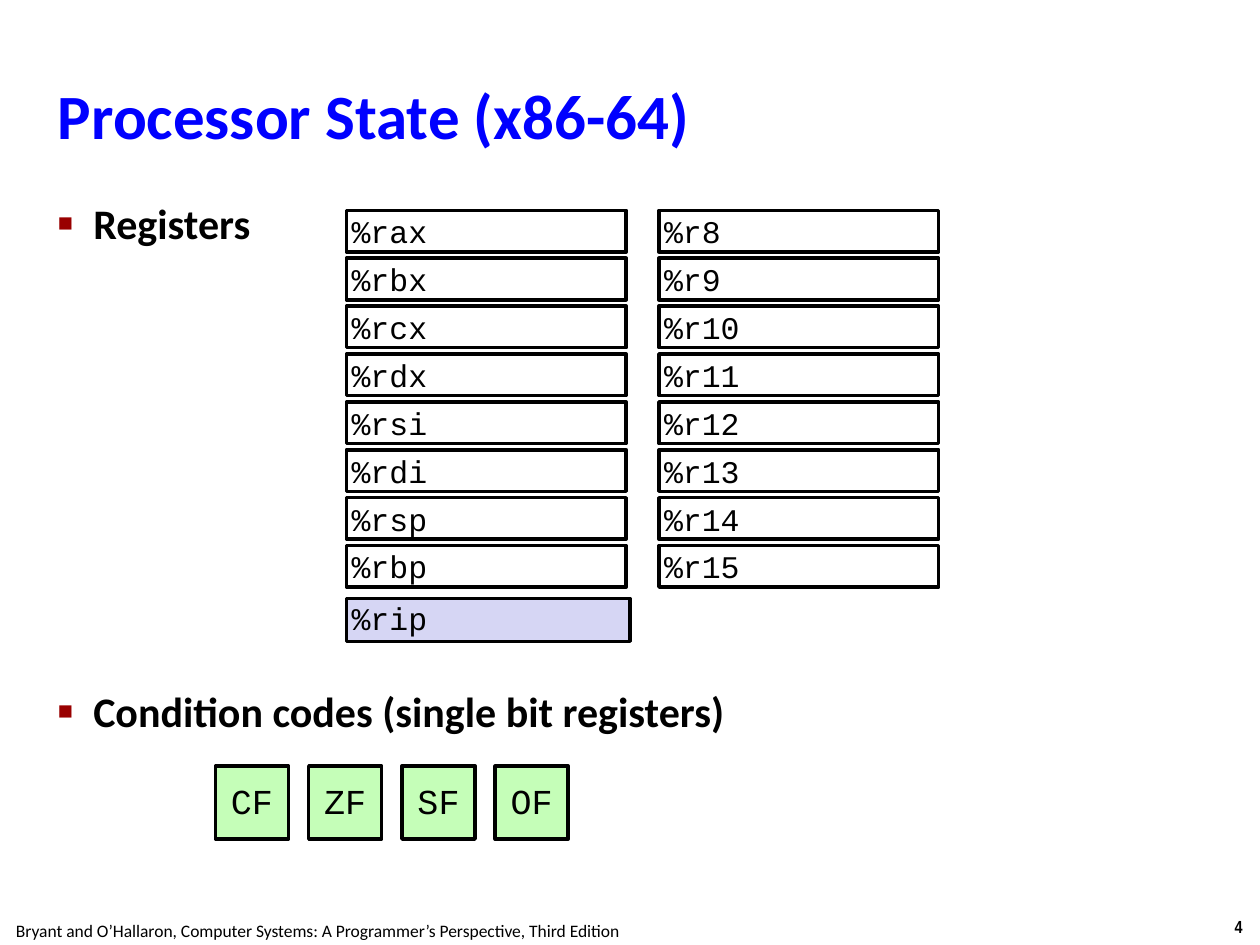
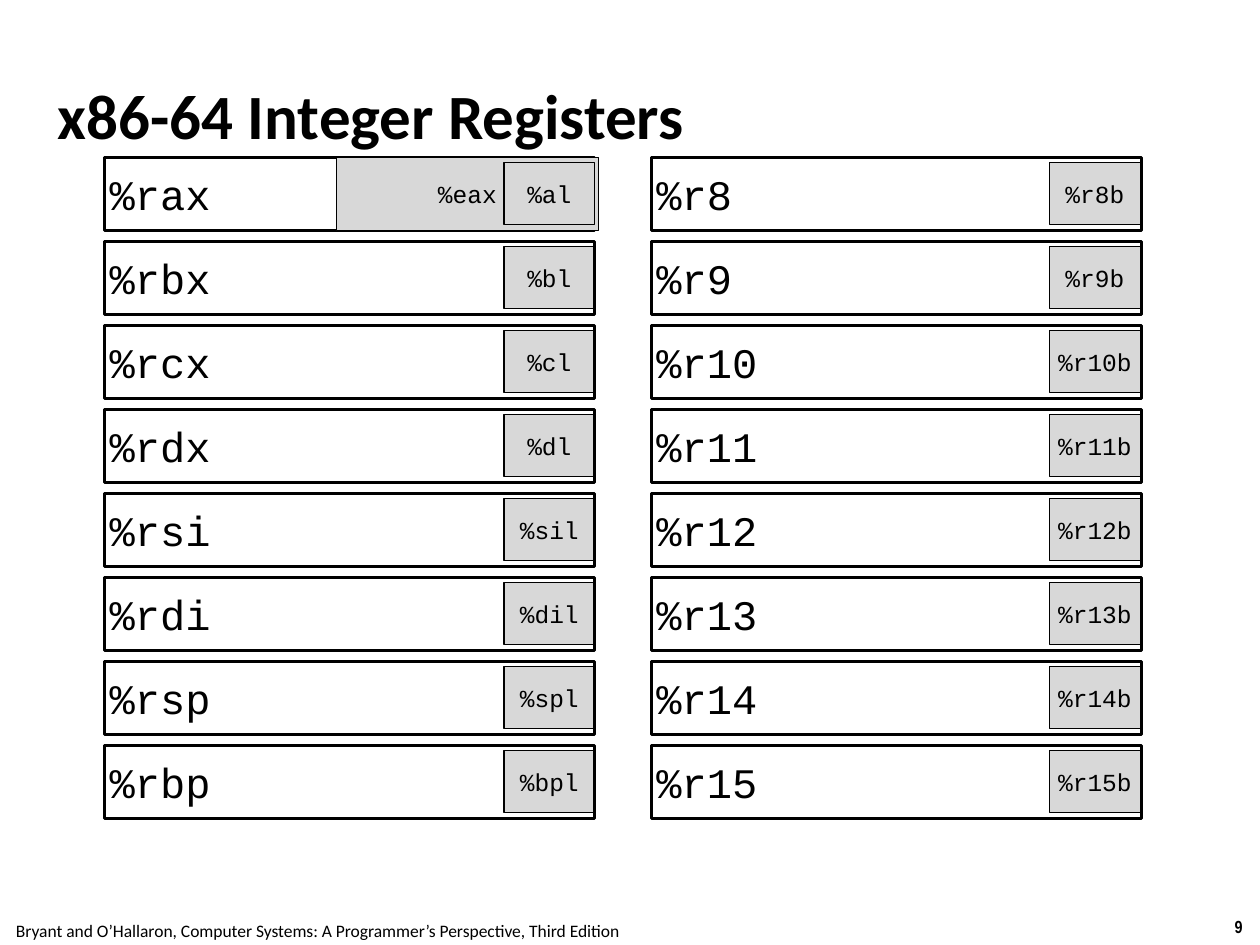
from lxml import etree
from pptx import Presentation
from pptx.dml.color import RGBColor
from pptx.enum.shapes import MSO_SHAPE
from pptx.enum.text import MSO_ANCHOR, MSO_AUTO_SIZE, PP_ALIGN
from pptx.oxml.ns import qn
from pptx.util import Inches, Pt

COLORS = {
    "ink": "000000",
    "blue": "0000FF",
    "bullet": "990000",
    "pointer": "D6D6F4",
    "flag": "C5FEB8",
    "byte": "D8D8D8",
}
SANS, NARROW, MONO = "Calibri", "Arial Narrow", "Courier New"
TITLE_ONLY, TITLE_AND_CONTENT = 5, 1
INSET = Inches(0.04)

CREDIT = ("Bryant and O’Hallaron, Computer Systems: "
          "A Programmer’s Perspective, Third Edition")

STATE_TITLE, STATE_NUMBER = "Processor State (x86-64)", "4"
STATE_TOPICS = [  # text, points of space above
    ("Registers", 6),
    ("Condition codes (single bit registers)", 250),
]
INSTRUCTION_POINTER = "%rip"
FLAGS = ["CF", "ZF", "SF", "OF"]

INTEGER_TITLE, INTEGER_NUMBER = "x86-64 Integer Registers", "9"
REGISTER_COLUMNS = [
    ["%rax", "%rbx", "%rcx", "%rdx", "%rsi", "%rdi", "%rsp", "%rbp"],
    ["%r8", "%r9", "%r10", "%r11", "%r12", "%r13", "%r14", "%r15"],
]
LOW_BYTE_COLUMNS = [
    ["%al", "%bl", "%cl", "%dl", "%sil", "%dil", "%spl", "%bpl"],
    [register + "b" for register in REGISTER_COLUMNS[1]],
]
LOW_HALF = "%eax"


def rgb(color):
    return RGBColor.from_string(COLORS[color])


def add_run(paragraph, text, size, font, color="ink", bold=False):
    run = paragraph.add_run()
    run.text = text
    run.font.size = Pt(size)
    run.font.name = font
    run.font.bold = bold
    run.font.color.rgb = rgb(color)


def set_insets(frame):
    frame.margin_left = frame.margin_right = INSET
    frame.margin_top = frame.margin_bottom = INSET


def place(shape, left, top, width, height):
    shape.left, shape.top = Inches(left), Inches(top)
    shape.width, shape.height = Inches(width), Inches(height)


def hang(paragraph, indent):
    properties = paragraph._p.get_or_add_pPr()
    properties.set("marL", str(Inches(indent)))
    properties.set("indent", str(-Inches(indent)))
    return properties


def add_margin_text(slide, text, left, top, width, font, bold=False):
    box = slide.shapes.add_textbox(
        Inches(left), Inches(top), Inches(width), Inches(0.27))
    box.text_frame.word_wrap = False
    paragraph = box.text_frame.paragraphs[0]
    paragraph.alignment = PP_ALIGN.CENTER
    add_run(paragraph, text, 10, font, bold=bold)


def add_titled_slide(deck, layout, title, number, title_color):
    """Add a slide with the title, page number and credit line all slides share."""
    slide = deck.slides.add_slide(deck.slide_layouts[layout])
    add_margin_text(slide, number, 9.66, 7.22, 0.34, NARROW, bold=True)
    add_margin_text(slide, CREDIT, -0.02, 7.25, 5.08, SANS)

    heading = slide.shapes.title
    place(heading, 0.42, 0.28, 9.17, 1.25)
    frame = heading.text_frame
    frame.auto_size = MSO_AUTO_SIZE.NONE
    frame.vertical_anchor = MSO_ANCHOR.MIDDLE
    set_insets(frame)
    paragraph = frame.paragraphs[0]
    paragraph.alignment = PP_ALIGN.LEFT
    hang(paragraph, 0.13)
    add_run(paragraph, title, 36, SANS, title_color, bold=True)
    return slide


def add_topics(slide, topics):
    body = slide.placeholders[1]
    place(body, 0.42, 1.53, 8.33, 5.47)
    frame = body.text_frame
    frame.auto_size = MSO_AUTO_SIZE.NONE
    set_insets(frame)
    for index, (topic, space) in enumerate(topics):
        paragraph = frame.add_paragraph() if index else frame.paragraphs[0]
        paragraph.space_before = Pt(space)
        properties = hang(paragraph, 0.28)
        bullet_color = etree.SubElement(properties, qn("a:buClr"))
        etree.SubElement(bullet_color, qn("a:srgbClr"), val=COLORS["bullet"])
        etree.SubElement(properties, qn("a:buSzPct"), val="60000")
        etree.SubElement(properties, qn("a:buChar"), char="■")
        add_run(paragraph, topic, 24, SANS, bold=True)


def add_cell(slide, text, left, top, width, height, size,
             fill=None, line=2, align=PP_ALIGN.LEFT, spacing=None):
    cell = slide.shapes.add_shape(
        MSO_SHAPE.RECTANGLE, Inches(left), Inches(top),
        Inches(width), Inches(height))
    cell.shadow.inherit = False
    if fill:
        cell.fill.solid()
        cell.fill.fore_color.rgb = rgb(fill)
    else:
        cell.fill.background()
    cell.line.color.rgb = rgb("ink")
    cell.line.width = Pt(line)
    frame = cell.text_frame
    frame.vertical_anchor = MSO_ANCHOR.MIDDLE
    set_insets(frame)
    paragraph = frame.paragraphs[0]
    paragraph.alignment = align
    paragraph.line_spacing = spacing
    add_run(paragraph, text, size, MONO)


def add_columns(slide, columns, lefts, top, pitch, width, height, size, **style):
    for names, left in zip(columns, lefts):
        for row, name in enumerate(names):
            add_cell(slide, name, left, top + row * pitch,
                     width, height, size, **style)


def build_state_slide(deck):
    slide = add_titled_slide(
        deck, TITLE_AND_CONTENT, STATE_TITLE, STATE_NUMBER, "blue")
    add_topics(slide, STATE_TOPICS)
    add_columns(slide, REGISTER_COLUMNS, (2.75, 5.23), 1.67, 0.38,
                2.22, 0.33, 18)
    add_cell(slide, INSTRUCTION_POINTER, 2.75, 4.75, 2.25, 0.34, 18,
             fill="pointer", spacing=0.95)
    for index, flag in enumerate(FLAGS):
        add_cell(slide, flag, 1.71 + index * 0.74, 6.08, 0.58, 0.58, 20,
                 fill="flag", align=PP_ALIGN.CENTER, spacing=0.95)


def build_integer_slide(deck):
    slide = add_titled_slide(
        deck, TITLE_ONLY, INTEGER_TITLE, INTEGER_NUMBER, "ink")
    top, pitch = 1.25, 2 / 3
    byte_top, byte_lefts, byte_size = top + 0.04, (4, 8.33), (0.72, 0.49)
    part = {"size": 14, "fill": "byte", "line": 0.75,
            "align": PP_ALIGN.CENTER}

    # The first low byte lies over the low half, so it is drawn last.
    (first_byte, *left_bytes), right_bytes = LOW_BYTE_COLUMNS
    add_columns(slide, [left_bytes], byte_lefts[:1], byte_top + pitch, pitch,
                *byte_size, **part)
    add_columns(slide, [right_bytes], byte_lefts[1:], byte_top, pitch,
                *byte_size, **part)
    add_columns(slide, REGISTER_COLUMNS, (0.83, 5.17), top, pitch,
                3.89, 0.58, 24)
    add_cell(slide, LOW_HALF, 2.67, top, 2.08, 0.58, **part)
    add_cell(slide, first_byte, byte_lefts[0], byte_top, *byte_size, **part)


def main():
    deck = Presentation()
    deck.slide_width, deck.slide_height = Inches(10), Inches(7.5)
    build_state_slide(deck)
    build_integer_slide(deck)
    deck.save("out.pptx")


if __name__ == "__main__":
    main()
